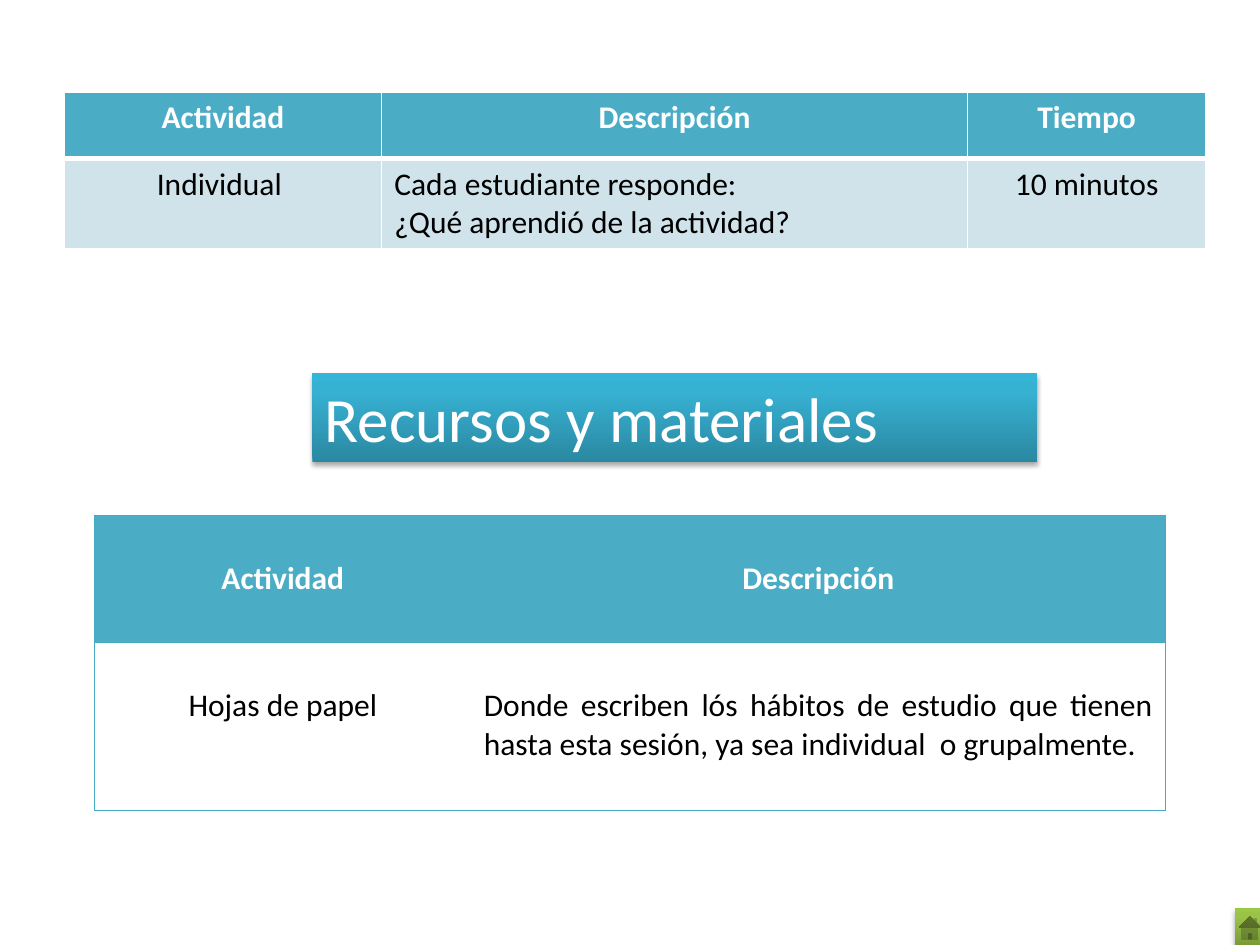
import dataclasses

import lxml.etree
import pptx
import pptx.dml.color
import pptx.enum.shapes
import pptx.enum.text
import pptx.oxml.ns
import pptx.util

Inches, Pt = pptx.util.Inches, pptx.util.Pt
RGB = pptx.dml.color.RGBColor.from_string
ALIGN = pptx.enum.text.PP_ALIGN
SHAPE = pptx.enum.shapes.MSO_SHAPE
qn = pptx.oxml.ns.qn


@dataclasses.dataclass(frozen=True)
class Theme:
    """Colours, font and type sizes of the slide."""
    font: str = "Calibri"
    body: int = 18
    title: int = 36
    white: str = "FFFFFF"
    black: str = "000000"
    header: str = "4BACC6"
    band: str = "D0E3EA"
    edge: str = "46AAC5"
    teal: tuple = ((0, "2A88A2"), (80, "37B1D2"), (100, "34B4D6"))
    green: tuple = ((0, "779737"), (80, "9BC348"), (100, "9DC746"))


THEME = Theme()


def add_node(parent, tag, **attrs):
    """Append a DrawingML element with the given attributes."""
    node = lxml.etree.SubElement(parent, qn(tag))
    for name, value in attrs.items():
        node.set(name, str(value))
    return node


def add_run(p, text, size, color, bold=False):
    """Add one styled run to a paragraph."""
    r = p.add_run()
    r.text = text
    r.font.name, r.font.size, r.font.bold = THEME.font, Pt(size), bold
    r.font.color.rgb = RGB(color)


def set_borders(cell, borders):
    """Draw the listed sides of a cell as (colour, width) and clear the others."""
    tc_pr = cell._tc.get_or_add_tcPr()
    for side in "LRTB":
        color, width = borders.get(side, (None, 0))
        ln = add_node(tc_pr, f"a:ln{side}", w=Pt(width))
        if color:
            add_node(add_node(ln, "a:solidFill"), "a:srgbClr", val=color)
        else:
            add_node(ln, "a:noFill")


def fill_cell(cell, lines, align, header, fill, top):
    """Fill a cell with its colour and one paragraph per line."""
    if fill:
        cell.fill.solid()
        cell.fill.fore_color.rgb = RGB(fill)
    else:
        cell.fill.background()
    cell.margin_top = top
    tf = cell.text_frame
    for i, line in enumerate(lines):
        p = tf.add_paragraph() if i else tf.paragraphs[0]
        p.alignment = align
        add_run(p, line, THEME.body, THEME.white if header else THEME.black, header)


def add_grid(s, box, cols, rows, content, body_fill, borders_at, top):
    """Place a table with a header row in the box."""
    table = s.shapes.add_table(len(rows), len(cols), *map(Inches, box)).table
    table.horz_banding = False
    for col, width in zip(table.columns, cols):
        col.width = Inches(width)
    for y, (row, height) in enumerate(zip(table.rows, rows)):
        row.height = Inches(height)
        for x, lines in enumerate(content[y]):
            header = y == 0
            align = ALIGN.JUSTIFY if y and x == 1 else ALIGN.CENTER
            cell = table.cell(y, x)
            set_borders(cell, borders_at(y, x))
            fill_cell(cell, lines, align, header, THEME.header if header else body_fill, Inches(top))


def add_activity_table(s, box):
    """Place the activity table with white rules between its cells."""
    def borders_at(y, x):
        """Return white rules, heavier between header and body."""
        borders = {side: (THEME.white, 1) for side in "LRTB"}
        borders["T" if y else "B"] = (THEME.white, 3)
        return borders

    content = [[["Actividad"], ["Descripción"], ["Tiempo"]],
               [["Individual "],
                ["Cada estudiante responde: ", "¿Qué aprendió de la actividad? "],
                ["10 minutos"]]]
    add_grid(s, box, (2.52, 4.65, 1.89), (0.53, 0.7), content, THEME.band, borders_at, 0.05)


def add_materials_table(s, box):
    """Place the materials table with an outline and a rule under its header."""
    def borders_at(y, x):
        """Return the outer side of the column and every horizontal rule."""
        return {side: (THEME.edge, 0.75) for side in ("TB" + "LR"[x])}

    content = [[["Actividad"], ["Descripción"]],
               [["Hojas de papel"],
                ["Donde escriben lós hábitos de estudio que tienen hasta esta sesión, "
                 "ya sea individual  o grupalmente."]]]
    add_grid(s, box, (2.99, 5.51), (1.01, 1.33), content, None, borders_at, 0.35)


def add_glossy_shape(s, kind, box, stops):
    """Place a shape with a vertical gradient and a soft shadow."""
    sp = s.shapes.add_shape(kind, *map(Inches, box))
    sp.fill.gradient()
    sp.fill.gradient_angle = 90
    sp.line.fill.background()
    sp.shadow.inherit = False
    sp_pr = sp._element.spPr
    gs_list = sp_pr.find(".//" + qn("a:gsLst"))
    gs_list.clear()
    for pos, color in stops:
        add_node(add_node(gs_list, "a:gs", pos=pos * 1000), "a:srgbClr", val=color)
    shadow = add_node(sp_pr.find(qn("a:effectLst")), "a:outerShdw", blurRad=Pt(3.1),
                      dist=Pt(1.8), dir=5400000, rotWithShape=0)
    add_node(add_node(shadow, "a:srgbClr", val=THEME.black), "a:alpha", val=35000)
    return sp


def add_banner(s, box):
    """Place the section title banner."""
    tf = add_glossy_shape(s, SHAPE.RECTANGLE, box, THEME.teal).text_frame
    tf.word_wrap = True
    tf.vertical_anchor = pptx.enum.text.MSO_ANCHOR.TOP
    tf.auto_size = pptx.enum.text.MSO_AUTO_SIZE.SHAPE_TO_FIT_TEXT
    p = tf.paragraphs[0]
    p.alignment = ALIGN.LEFT
    add_run(p, "Recursos y materiales", THEME.title, THEME.white)


def main():
    """Build the slide and save it."""
    prs = pptx.Presentation()
    prs.slide_width, prs.slide_height = Inches(10), Inches(7.5)
    s = prs.slides.add_slide(prs.slide_layouts[6])
    add_activity_table(s, (0.51, 0.73, 9.06, 1.23))
    add_materials_table(s, (0.75, 4.09, 8.5, 2.34))
    add_banner(s, (2.48, 2.96, 5.75, 0.71))
    add_glossy_shape(s, SHAPE.ACTION_BUTTON_HOME, (9.8, 7.21, 0.24, 0.31), THEME.green)
    prs.save("out.pptx")


if __name__ == "__main__":
    main()
